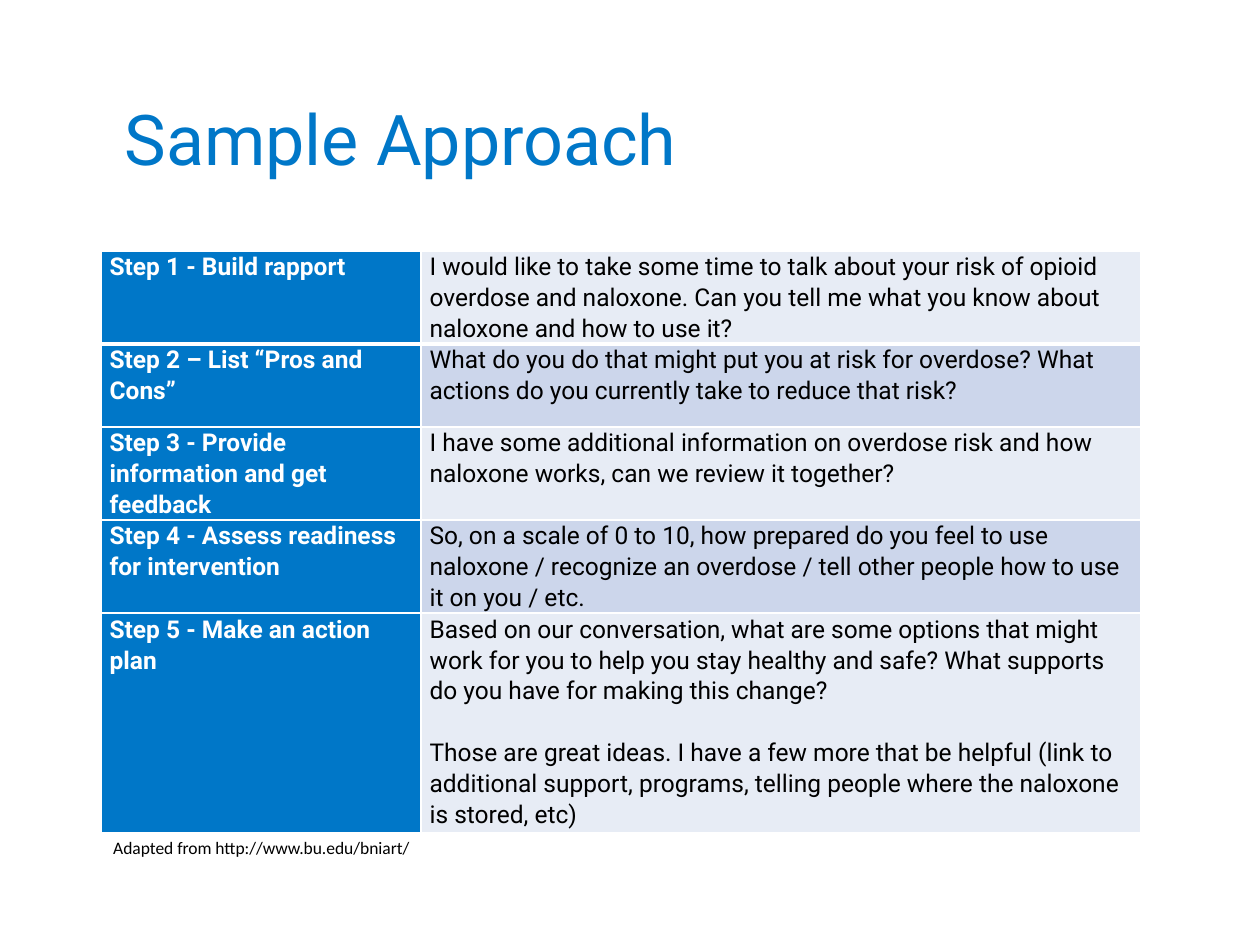
from lxml.etree import SubElement
from pptx import Presentation
from pptx.dml.color import RGBColor
from pptx.enum.text import MSO_ANCHOR, MSO_AUTO_SIZE, PP_ALIGN
from pptx.oxml.ns import qn
from pptx.util import Inches, Pt

BLUE = RGBColor(0x00, 0x77, 0xC8)
PALE = RGBColor(0xE7, 0xEC, 0xF5)
MIST = RGBColor(0xCC, 0xD6, 0xEB)
WHITE = RGBColor(0xFF, 0xFF, 0xFF)
BLACK = RGBColor(0x00, 0x00, 0x00)

STEPS = [
    ("Step 1 - Build rapport",
     ["I would like to take some time to talk about your risk of opioid overdose "
      "and naloxone. Can you tell me what you know about naloxone and how to use it?"]),
    ("Step 2 – List “Pros and Cons”",
     ["What do you do that might put you at risk for overdose? "
      "What actions do you currently take to reduce that risk?"]),
    ("Step 3 - Provide information and get feedback",
     ["I have some additional information on overdose risk and how naloxone works, "
      "can we review it together?"]),
    ("Step 4 - Assess readiness for intervention",
     ["So, on a scale of 0 to 10, how prepared do you feel to use naloxone / "
      "recognize an overdose / tell other people how to use it on you / etc."]),
    ("Step 5 - Make an action plan",
     ["Based on our conversation, what are some options that might work for you to "
      "help you stay healthy and safe? What supports do you have for making this change?",
      "Those are great ideas. I have a few more that be helpful (link to additional "
      "support, programs, telling people where the naloxone is stored, etc)"]),
]
WIDTHS = [2.54, 5.71]
HEIGHTS = [0.74, 0.66, 0.72, 0.74, 1.74]


def write(frame, *lines, size=14, font="Roboto", color=BLACK, bold=False,
          spacing=None, gap=0):
    """Fill a text frame, one paragraph a line, with gap points between them."""
    frame.word_wrap = True
    for i, line in enumerate(lines):
        para = frame.add_paragraph() if i else frame.paragraphs[0]
        para.alignment = PP_ALIGN.LEFT
        para.space_before = Pt(gap if i else 0)
        if spacing:
            para.line_spacing = spacing
        run = para.add_run()
        run.text = line
        run.font.size = Pt(size)
        run.font.name = font
        run.font.bold = bold
        run.font.color.rgb = color


def edge(cell, **widths):
    """Draw white borders; widths are points by side, in the order L, R, T, B."""
    props = cell._tc.get_or_add_tcPr()
    for side, width in widths.items():
        line = SubElement(props, qn(f"a:ln{side}"), w=str(Pt(width)))
        fill = SubElement(line, qn("a:solidFill"))
        SubElement(fill, qn("a:srgbClr"), val=str(WHITE))


class Deck:
    def __init__(self):
        self.prs = Presentation()
        self.prs.slide_width = Inches(10)
        self.prs.slide_height = Inches(7.5)
        self.slide = self.prs.slides.add_slide(self.prs.slide_layouts[5])

    def title(self, text, left, top, width, height):
        box = self.slide.shapes.title
        box.left, box.top = Inches(left), Inches(top)
        box.width, box.height = Inches(width), Inches(height)
        frame = box.text_frame
        frame.auto_size = MSO_AUTO_SIZE.NONE
        frame.vertical_anchor = MSO_ANCHOR.MIDDLE
        frame.margin_bottom = Inches(0.32)
        write(frame, text, size=40, color=BLUE, spacing=0.9)

    def table(self, steps, left, top):
        grid = self.slide.shapes.add_table(
            len(steps), len(WIDTHS), Inches(left), Inches(top),
            Inches(sum(WIDTHS)), Inches(sum(HEIGHTS))).table
        for col, width in zip(grid.columns, WIDTHS):
            col.width = Inches(width)
        for i, (step, lines) in enumerate(steps):
            grid.rows[i].height = Inches(HEIGHTS[i])
            head, body = grid.rows[i].cells
            self.cell(head, i, BLUE, step, color=WHITE, bold=True)
            self.cell(body, i, MIST if i % 2 else PALE, *lines, gap=17.7)

    def cell(self, cell, row, fill, *lines, **style):
        cell.margin_left = cell.margin_right = Inches(0.07)
        cell.margin_top = cell.margin_bottom = 0
        edge(cell, L=1, R=1, T=3 if row == 1 else 1, B=3 if row == 0 else 1)
        cell.fill.solid()
        cell.fill.fore_color.rgb = fill
        write(cell.text_frame, *lines, spacing=1.07, **style)

    def note(self, text, left, top, width, height):
        box = self.slide.shapes.add_textbox(
            Inches(left), Inches(top), Inches(width), Inches(height))
        box.text_frame.auto_size = MSO_AUTO_SIZE.SHAPE_TO_FIT_TEXT
        write(box.text_frame, text, size=10, font="Calibri")


def main():
    deck = Deck()
    deck.title("Sample Approach", 0.89, 0.69, 8.17, 1.16)
    deck.table(STEPS, 0.8, 1.99)
    deck.note("Adapted from http://www.bu.edu/bniart/", 0.8, 6.59, 5.01, 0.27)
    deck.prs.save("out.pptx")


if __name__ == "__main__":
    main()
